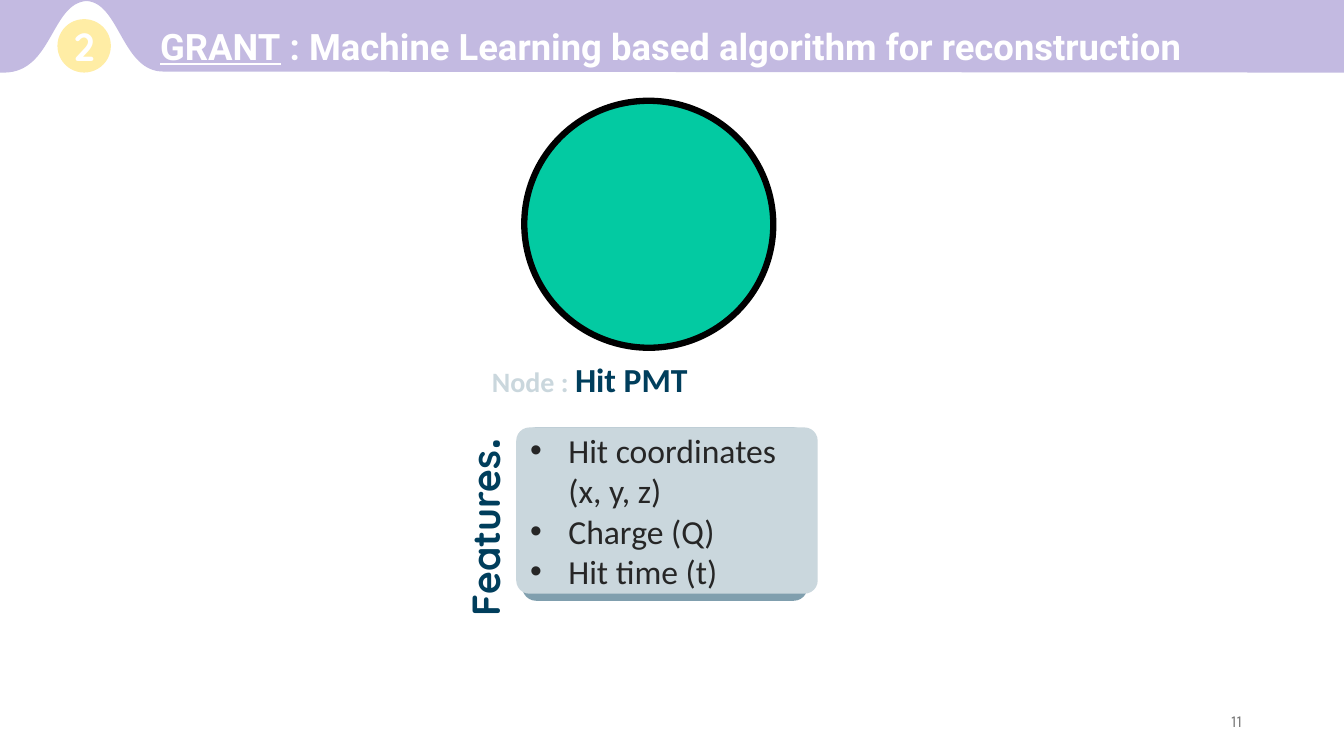
from pptx import Presentation
from pptx.dml.color import RGBColor
from pptx.enum.shapes import MSO_SHAPE
from pptx.enum.text import MSO_ANCHOR, PP_ALIGN
from pptx.util import Inches, Pt
from lxml.etree import SubElement
from pptx.oxml.ns import qn

WHITE = RGBColor(0xFF, 0xFF, 0xFF)
BLACK = RGBColor(0, 0, 0)
LILAC = RGBColor(0xC3, 0xBA, 0xE1)
YELLOW = RGBColor(0xFF, 0xED, 0xA5)
GREEN = RGBColor(0x03, 0xCA, 0xA2)
NAVY = RGBColor(0x00, 0x3E, 0x5C)
PALE = RGBColor(0xCA, 0xD7, 0xDD)
STEEL = RGBColor(0x80, 0x9F, 0xAE)
DARK = RGBColor(0x26, 0x26, 0x26)
GREY = RGBColor(0x79, 0x79, 0x79)


def add_run(p, text, font, size, color, bold=False, underline=False):
    """Add one formatted run to a paragraph."""
    r = p.add_run()
    r.text = text
    r.font.name = font
    r.font.size = Pt(size)
    r.font.color.rgb = color
    r.font.bold = bold
    r.font.underline = underline


def add_text(s, box, runs, align=PP_ALIGN.LEFT, anchor=MSO_ANCHOR.TOP, rotation=0):
    """Add a wrapping text box holding one paragraph."""
    tb = s.shapes.add_textbox(*map(Inches, box))
    tb.rotation = rotation
    tf = tb.text_frame
    tf.word_wrap = True
    tf.vertical_anchor = anchor
    p = tf.paragraphs[0]
    p.alignment = align
    for run in runs:
        add_run(p, *run)


def paint(sp, fill, line=None, width=0):
    """Set the fill and outline of a shape and drop its shadow."""
    sp.shadow.inherit = False
    sp.fill.solid()
    sp.fill.fore_color.rgb = fill
    if line is None:
        sp.line.fill.background()
    else:
        sp.line.color.rgb = line
        sp.line.width = Pt(width)


def add_circle(s, box, fill, line=None, width=0):
    """Add a filled ellipse."""
    sp = s.shapes.add_shape(MSO_SHAPE.OVAL, *map(Inches, box))
    paint(sp, fill, line, width)
    return sp


def add_card(s, box, fill):
    """Add a rounded rectangle with small corners."""
    sp = s.shapes.add_shape(MSO_SHAPE.ROUNDED_RECTANGLE, *map(Inches, box))
    sp.adjustments[0] = 0.08
    paint(sp, fill)
    return sp


def add_bullets(sp, items):
    """Fill a shape with a bulleted list."""
    tf = sp.text_frame
    tf.word_wrap = True
    tf.vertical_anchor = MSO_ANCHOR.MIDDLE
    for i, item in enumerate(items):
        p = tf.paragraphs[0] if i == 0 else tf.add_paragraph()
        p.alignment = PP_ALIGN.LEFT
        pPr = p._p.get_or_add_pPr()
        pPr.set("marL", str(Inches(0.38)))
        pPr.set("indent", str(-Inches(0.38)))
        SubElement(pPr, qn("a:buFont"), typeface="Arial")
        SubElement(pPr, qn("a:buChar"), char="•")
        add_run(p, item, "Calibri", 24, DARK)


def bezier(a, b, c, d, steps=32):
    """Return points along a cubic curve, without its start."""
    points = []
    for i in range(1, steps + 1):
        t = i / steps
        u = 1 - t
        points.append(tuple(
            u**3 * w + 3 * u * u * t * x + 3 * u * t * t * y + t**3 * z
            for w, x, y, z in zip(a, b, c, d)))
    return points


def add_band(s):
    """Add the header band with its bell-shaped notch."""
    right, peak, left = (1.63, 0.71), (0.86, 0.01), (0.05, 0.72)
    points = [(13.33, 0.72), right]
    points += bezier(right, (1.21, 0.72), (1.19, 0.03), peak)
    points += bezier(peak, (0.51, 0.03), (0.52, 0.71), left)
    points += [(0, 0.72), (0, 0)]
    fb = s.shapes.build_freeform(Inches(13.33), 0, scale=1.0)
    fb.add_line_segments([(Inches(x), Inches(y)) for x, y in points], close=True)
    paint(fb.convert_to_shape(), LILAC)


def add_badge(s, number):
    """Add the numbered section circle."""
    sp = add_circle(s, (0.57, 0.19, 0.53, 0.53), YELLOW)
    tf = sp.text_frame
    tf.margin_left = tf.margin_right = tf.margin_top = tf.margin_bottom = 0
    tf.word_wrap = False
    tf.vertical_anchor = MSO_ANCHOR.MIDDLE
    p = tf.paragraphs[0]
    p.alignment = PP_ALIGN.CENTER
    add_run(p, number, "Quicksand", 28, WHITE, True)


def main():
    """Build the slide and save it."""
    prs = Presentation()
    prs.slide_width, prs.slide_height = Inches(13.33), Inches(7.5)
    s = prs.slides.add_slide(prs.slide_layouts[6])
    add_text(s, (9.42, 6.95, 3, 0.4), [("11", "Karla", 12, GREY)],
             PP_ALIGN.RIGHT, MSO_ANCHOR.MIDDLE)
    node = add_circle(s, (5.2, 1, 2.47, 2.45), GREEN, BLACK, 4.5)
    node.rotation = 7.8
    add_text(s, (4.78, 3.51, 2.86, 0.5),
             [("Node : ", "Calibri", 20, PALE, True),
              ("Hit PMT", "Calibri", 24, NAVY, True)])
    add_text(s, (3.78, 4.87, 1.97, 0.71),
             [("Features", "Quicksand", 28, NAVY, True),
              (".", "Quicksand", 36, NAVY, True)], rotation=270)
    add_card(s, (5.18, 4.24, 2.83, 1.72), STEEL)
    card = add_card(s, (5.12, 4.24, 2.99, 1.65), PALE)
    add_bullets(card, ["Hit coordinates (x, y, z)", "Charge (Q)", "Hit time (t)"])
    add_band(s)
    add_badge(s, "2")
    add_text(s, (1.49, 0.19, 11.91, 0.54),
             [("GRANT", "Roboto", 26, WHITE, True, True),
              (" : Machine Learning based algorithm for reconstruction",
               "Roboto", 26, WHITE, True)])
    prs.save("out.pptx")


if __name__ == "__main__":
    main()
